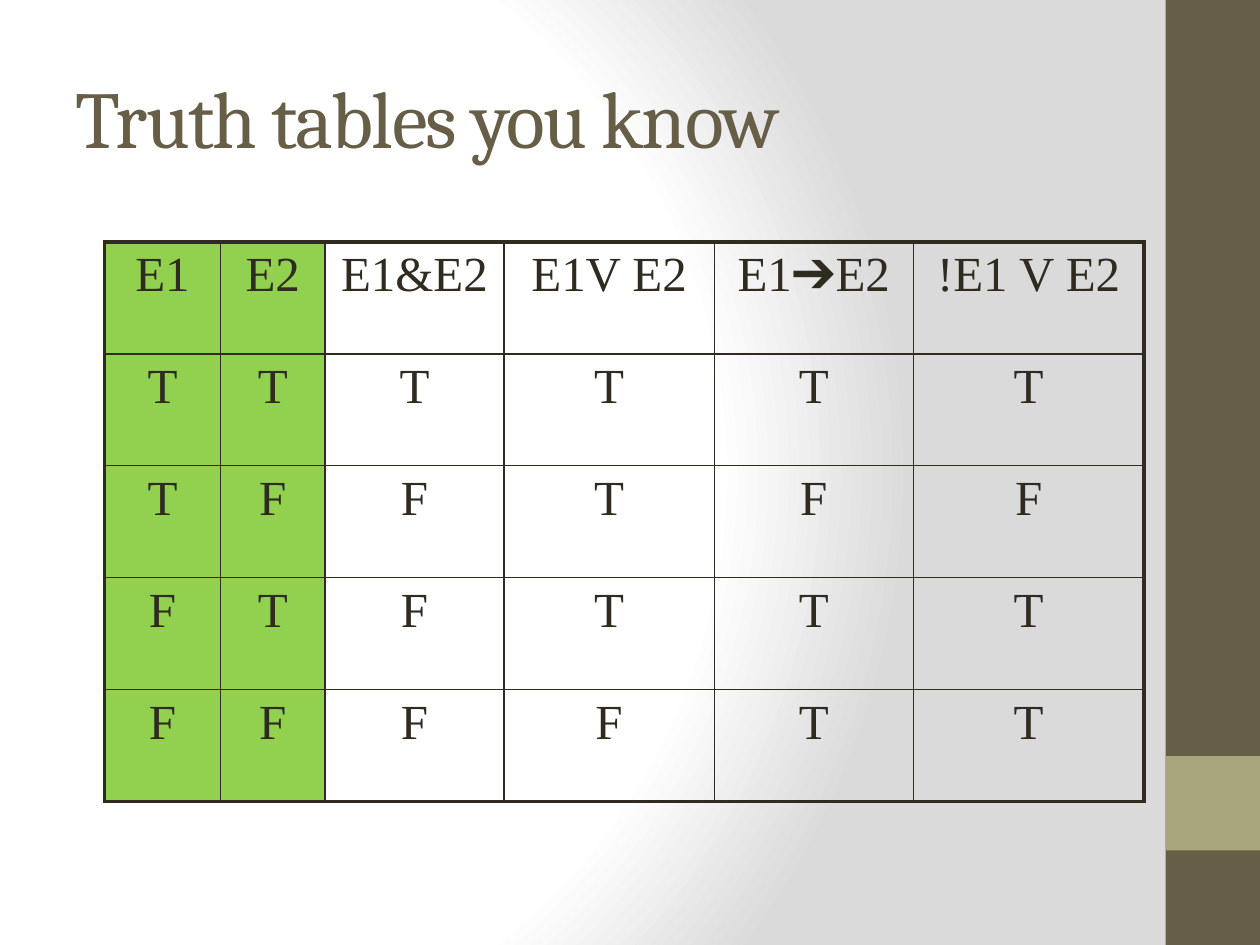
from pptx import Presentation
from pptx import util as u
from pptx.dml.color import RGBColor
from pptx.enum import shapes, text
from pptx.oxml import parse_xml
from pptx.oxml.ns import nsdecls
from lxml import etree

BROWN, TAN, INK, GREEN = "675E47", "A9A57C", "2F2B20", "92D050"
THIN, THICK = 1, 2.25
COLS = [0.92, 0.83, 1.42, 1.67, 1.58, 1.83]
ROWS = [
    ["E1", "E2", "E1&E2", "E1V E2", "E1➔E2", "!E1 V E2"],
    list("TTTTTT"),
    list("TFFTFF"),
    list("FTFTTT"),
    list("FFFFTT"),
]


def rgb(value):
    return RGBColor.from_string(value)


def put_text(tf, content, size, font, color, align, anchor=None, spacing=None, before=None):
    """Write one paragraph; spacing is in points, before in percent of a line."""
    p = tf.paragraphs[0]
    p.alignment = align
    r = p.add_run()
    r.text = content
    r.font.size, r.font.name, r.font.bold = u.Pt(size), font, False
    r.font.color.rgb = rgb(color)
    if anchor is not None:
        tf.vertical_anchor = anchor
    if spacing is not None:
        r.font._element.set("spc", str(spacing * 100))
    if before is not None:
        p._p.get_or_add_pPr().insert(0, parse_xml(
            f'<a:spcBef {nsdecls("a")}><a:spcPct val="{before * 1000}"/></a:spcBef>'))


def set_background(s):
    stops = "".join(f'<a:gs pos="{pos * 1000}"><a:srgbClr val="{color}"/></a:gs>'
                    for pos, color in [(0, "FFFFFF"), (75, "FFFFFF"), (100, "DADADA")])
    s._element.cSld.insert(0, parse_xml(
        f'<p:bg {nsdecls("p", "a")}><p:bgPr><a:gradFill rotWithShape="1">'
        f'<a:gsLst>{stops}</a:gsLst><a:path path="circle">'
        '<a:fillToRect l="20000" t="50000" r="100000" b="50000"/></a:path>'
        '</a:gradFill><a:effectLst/></p:bgPr></p:bg>'))


def add_block(s, top, height, color):
    sp = s.shapes.add_shape(shapes.MSO_SHAPE.RECTANGLE, u.Inches(9.25), u.Inches(top),
                            u.Inches(0.75), u.Inches(height))
    sp.shadow.inherit = False
    sp.fill.solid()
    sp.fill.fore_color.rgb = rgb(color)
    sp.line.fill.background()


def add_title(s, content):
    sp = s.shapes.title
    sp.left, sp.top = u.Inches(0.5), u.Inches(0.3)
    sp.width, sp.height = u.Inches(8.33), u.Inches(1.25)
    put_text(sp.text_frame, content, 46, "Cambria", BROWN, text.PP_ALIGN.LEFT,
             anchor=text.MSO_ANCHOR.MIDDLE, spacing=-1)


def set_borders(cell, widths):
    tcPr = cell._tc.get_or_add_tcPr()
    for side, width in widths.items():
        ln = etree.SubElement(tcPr, f"{{{tcPr.nsmap['a']}}}ln{side}", w=str(u.Pt(width)))
        ln.append(parse_xml(f'<a:solidFill {nsdecls("a")}><a:srgbClr val="{INK}"/></a:solidFill>'))


def add_truth_table(s):
    last_row, last_col = len(ROWS) - 1, len(COLS) - 1
    table = s.shapes.add_table(len(ROWS), len(COLS), u.Inches(0.83), u.Inches(1.92),
                               u.Inches(sum(COLS)), u.Inches(4.44)).table
    table.first_row = table.horz_banding = False
    for column, width in zip(table.columns, COLS):
        column.width = u.Inches(width)
    for i, row in enumerate(ROWS):
        for j, content in enumerate(row):
            cell = table.cell(i, j)
            # Thick outline, thin inner lines
            outer = {"L": j == 0, "R": j == last_col, "T": i == 0, "B": i == last_row}
            set_borders(cell, {side: THICK if out else THIN for side, out in outer.items()})
            # The two input columns are green
            if j < 2:
                cell.fill.solid()
                cell.fill.fore_color.rgb = rgb(GREEN)
            else:
                cell.fill.background()
            put_text(cell.text_frame, content, 28, "Times New Roman", INK,
                     text.PP_ALIGN.CENTER, before=20)


def main():
    prs = Presentation()
    prs.slide_width, prs.slide_height = u.Inches(10), u.Inches(7.5)
    s = prs.slides.add_slide(prs.slide_layouts[5])
    set_background(s)
    # Side band with its accent
    add_block(s, 0, 7.5, BROWN)
    add_block(s, 6, 0.75, TAN)
    # Content
    add_title(s, "Truth tables you know")
    add_truth_table(s)
    prs.save("out.pptx")


if __name__ == "__main__":
    main()
